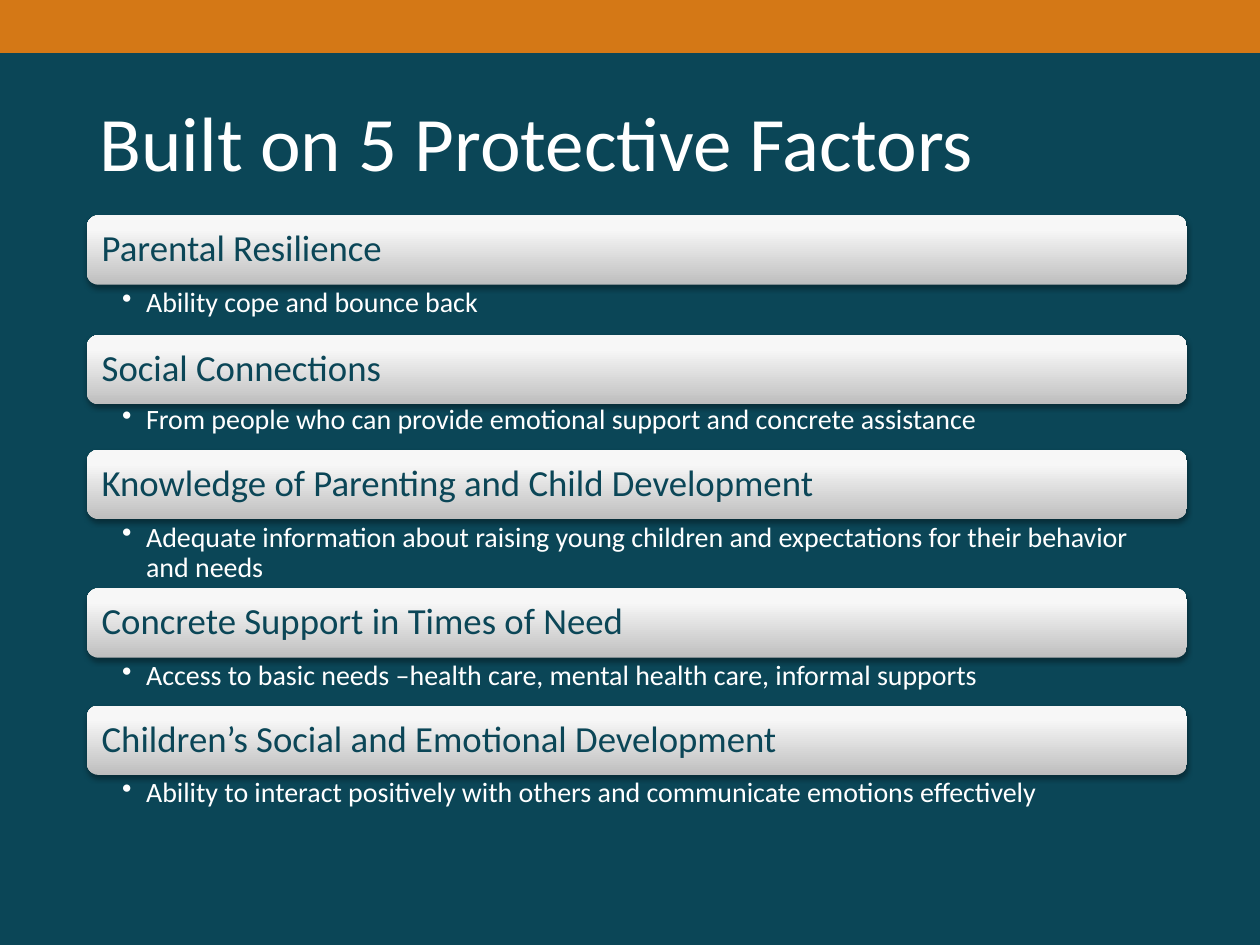
from lxml import etree
from pptx import Presentation
from pptx.dml.color import RGBColor
from pptx.enum.shapes import MSO_SHAPE
from pptx.enum.text import MSO_ANCHOR, MSO_AUTO_SIZE, PP_ALIGN
from pptx.oxml import parse_xml
from pptx.oxml.ns import qn
from pptx.util import Inches, Pt

RECTANGLE = MSO_SHAPE.RECTANGLE
ROUNDED = MSO_SHAPE.ROUNDED_RECTANGLE
TOP, MIDDLE, BOTTOM = MSO_ANCHOR.TOP, MSO_ANCHOR.MIDDLE, MSO_ANCHOR.BOTTOM
LEFT_ALIGN = PP_ALIGN.LEFT
NO_AUTOFIT = MSO_AUTO_SIZE.NONE

TEAL, ORANGE, WHITE = "0B4657", "D47816", "FFFFFF"
BAR_STOPS = [(0, "BEBEBE"), (80, "F7F7F7"), (100, "F8F8F8")]
FONT = "Calibri"
DRAWING_NS = "http://schemas.openxmlformats.org/drawingml/2006/main"

LEFT, WIDTH, FIRST_TOP = 0.69, 8.73, 1.71
BAR_HEIGHT = 0.55
FACTORS = [
    ("Parental Resilience", "Ability cope and bounce back", 0.38, 0),
    ("Social Connections",
     "From people who can provide emotional support and concrete assistance", 0.38, 0.02),
    ("Knowledge of Parenting and Child Development",
     "Adequate information about raising young children and expectations "
     "for their behavior and needs", 0.55, 0),
    ("Concrete Support in Times of Need",
     "Access to basic needs –health care, mental health care, informal supports", 0.38, 0),
    ("Children’s Social and Emotional Development",
     "Ability to interact positively with others and communicate emotions effectively", 0.38, 0),
]


def color(value):
    return RGBColor.from_string(value)


def write(holder, text, size, value, anchor, insets=(0.1, 0.05, 0.1, 0.05), spacing=0.9):
    frame = holder.text_frame
    frame.word_wrap = True
    frame.auto_size = NO_AUTOFIT
    frame.vertical_anchor = anchor
    (frame.margin_left, frame.margin_top,
     frame.margin_right, frame.margin_bottom) = map(Inches, insets)
    paragraph = frame.paragraphs[0]
    paragraph.alignment = LEFT_ALIGN
    paragraph.line_spacing = spacing
    run = paragraph.add_run()
    run.text = text
    run.font.name = FONT
    run.font.size = Pt(size)
    run.font.color.rgb = color(value)
    return paragraph


def add_bullet(paragraph, indent):
    properties = paragraph._p.get_or_add_pPr()
    properties.set("marL", str(Inches(indent)))
    properties.set("indent", str(-Inches(indent)))
    etree.SubElement(properties, qn("a:buChar")).set("char", "•")


def shade_bar(bar):
    bar.fill.background()
    bar.line.fill.background()
    stops = "".join(
        f'<a:gs pos="{position * 1000}"><a:srgbClr val="{value}"/></a:gs>'
        for position, value in BAR_STOPS)
    gradient = parse_xml(
        f'<a:gradFill xmlns:a="{DRAWING_NS}" rotWithShape="1"><a:gsLst>{stops}</a:gsLst>'
        '<a:lin ang="16200000" scaled="0"/></a:gradFill>')
    properties = bar._element.spPr
    properties.replace(properties.find(qn("a:noFill")), gradient)
    bar.shadow.inherit = False
    properties.find(qn("a:effectLst")).append(parse_xml(
        f'<a:outerShdw xmlns:a="{DRAWING_NS}" blurRad="{Pt(3.1)}" dist="{Pt(1.8)}" '
        'dir="5400000" rotWithShape="0"><a:srgbClr val="000000">'
        '<a:alpha val="35000"/></a:srgbClr></a:outerShdw>'))


def add_band(slide, left, top, width, height):
    band = slide.shapes.add_shape(RECTANGLE, *map(Inches, (left, top, width, height)))
    band.shadow.inherit = False
    band.fill.solid()
    band.fill.fore_color.rgb = color(ORANGE)
    band.line.fill.background()


def add_title(slide, left, top, width, height):
    title = slide.shapes.title
    title.left, title.top, title.width, title.height = map(Inches, (left, top, width, height))
    write(title, "Built on 5 Protective Factors", 44, WHITE, BOTTOM, spacing=1.0)


def add_factors(slide, left, top, width):
    for heading, detail, detail_height, bar_shift in FACTORS:
        bar = slide.shapes.add_shape(
            ROUNDED, *map(Inches, (left, top + bar_shift, width, BAR_HEIGHT)))
        shade_bar(bar)
        write(bar, heading, 21, TEAL, MIDDLE, (0.09, 0.09, 0.09, 0.09))
        top += BAR_HEIGHT
        note = slide.shapes.add_textbox(*map(Inches, (left, top, width, detail_height)))
        add_bullet(write(note, detail, 16, WHITE, TOP, (0.28, 0.03, 0.16, 0.03)), 0.19)
        top += detail_height


def main():
    deck = Presentation()
    deck.slide_width, deck.slide_height = Inches(10), Inches(7.5)
    slide = deck.slides.add_slide(deck.slide_layouts[5])
    slide.background.fill.solid()
    slide.background.fill.fore_color.rgb = color(TEAL)
    add_band(slide, 0, 0, 10, 0.42)
    add_title(slide, 0.69, 0.08, 8.62, 1.45)
    add_factors(slide, LEFT, FIRST_TOP, WIDTH)
    deck.save("out.pptx")


if __name__ == "__main__":
    main()
